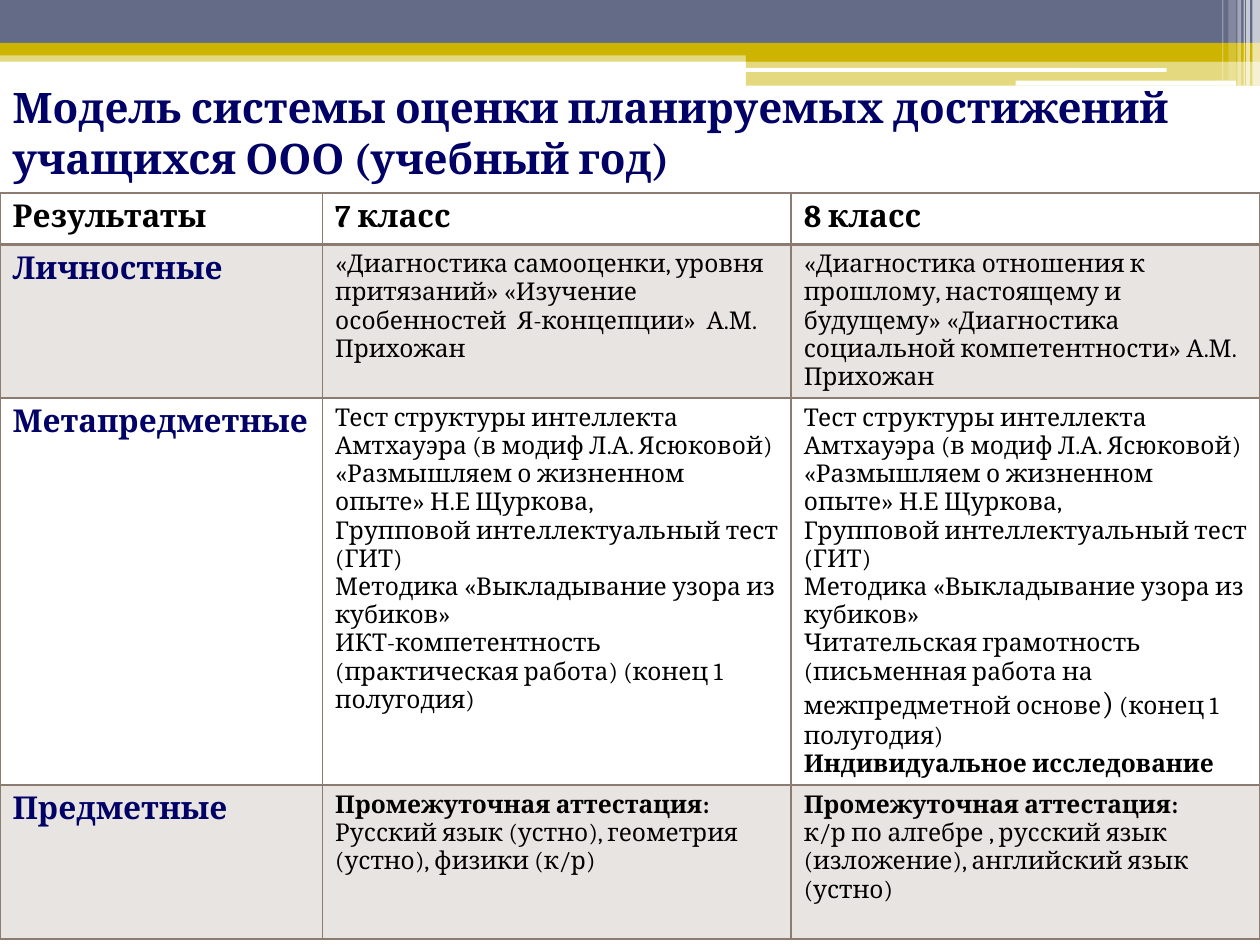
from pptx import Presentation
from pptx.dml.color import RGBColor
from pptx.enum import shapes, text
from pptx.oxml import parse_xml, ns
from pptx.util import Inches, Pt

FONT = "Cambria"
NAVY, BLACK, BROWN = "000066", "000000", "8C7B70"
SLATE, GOLD, WHITE = "646B86", "CCB400", "FFFFFF"

TITLE = "Модель системы оценки планируемых достижений учащихся ООО (учебный год)"
BARS = [
    (0, 0.4, 10, 0.09, GOLD, 50),
    (0, 0, 10, 0.34, SLATE, 100),
    (0, 0.34, 10, 0.1, GOLD, 100),
    (5.92, 0.39, 4.08, 0.1, GOLD, 100),
    (5.92, 0.48, 4.08, 0.2, GOLD, 50),
]
PILLS = [(5.91, 0.54, 3.35, 0.03, WHITE, 100), (8.06, 0.64, 1.75, 0.04, WHITE, 100)]
STRIPES = [
    (9.94, 0.06, 0.68, 65),
    (9.89, 0.03, 0.68, 65),
    (9.87, 0.01, 0.68, 60),
    (9.82, 0.03, 0.68, 40),
    (9.75, 0.06, 0.64, 20),
    (9.7, 0.01, 0.64, 30),
]

EXAM = "Промежуточная аттестация:"
STUDY = "Индивидуальное исследование"
STRONG = {EXAM, STUDY}
TESTS = [
    "Тест структуры интеллекта Амтхауэра (в модиф Л.А. Ясюковой)",
    "«Размышляем о жизненном опыте» Н.Е Щуркова,",
    "Групповой интеллектуальный тест",
    "(ГИТ)",
    "Методика «Выкладывание узора из кубиков»",
]
READING = (
    ("Читательская грамотность (письменная работа на межпредметной основе", 14),
    (")", 18),
    (" (конец 1 полугодия)", 14),
)
ROWS = [
    (["Результаты"], ["7 класс"], ["8 класс"]),
    (
        ["Личностные"],
        ["«Диагностика самооценки, уровня притязаний» «Изучение особенностей  Я-концепции»  А.М. Прихожан"],
        ["«Диагностика отношения к прошлому, настоящему и будущему» «Диагностика социальной компетентности» А.М. Прихожан"],
    ),
    (
        ["Метапредметные"],
        TESTS + ["ИКТ-компетентность (практическая работа) (конец 1 полугодия)"],
        TESTS + [READING, STUDY],
    ),
    (
        ["Предметные"],
        [EXAM, "Русский язык (устно), геометрия (устно), физики (к/р)"],
        [EXAM, "к/р по алгебре , русский язык (изложение), английский язык (устно)"],
    ),
]
WIDTHS = [2.56, 3.72, 3.72]
HEIGHTS = [0.41, 1.22, 3.07, 1.22]


def paint(fill, props, color, alpha=100):
    fill.solid()
    fill.fore_color.rgb = RGBColor.from_string(color)
    if alpha < 100:
        tint = props.find(ns.qn("a:solidFill"))[0]
        tint.append(parse_xml(f'<a:alpha {ns.nsdecls("a")} val="{alpha * 1000}"/>'))


def style(font, size, color, bold):
    font.name, font.size, font.bold = FONT, Pt(size), bold
    font.color.rgb = RGBColor.from_string(color)


def add_bar(slide, kind, left, top, width, height, color, alpha):
    bar = slide.shapes.add_shape(kind, *map(Inches, (left, top, width, height)))
    bar.shadow.inherit = False
    bar.line.fill.background()
    paint(bar.fill, bar.element.spPr, color, alpha)


def add_edges(props, row):
    widths = {"L": 1, "R": 1, "T": 2 if row == 1 else 1, "B": 2 if row == 0 else 1}
    for side, width in widths.items():
        props.append(parse_xml(
            f'<a:ln{side} {ns.nsdecls("a")} w="{Pt(width)}"><a:solidFill>'
            f'<a:srgbClr val="{BROWN}"/></a:solidFill></a:ln{side}>'))


def fill_cell(cell, lines, row, col):
    head = row == 0 or col == 0
    color = NAVY if row and col == 0 else BLACK
    for i, line in enumerate(lines):
        frame = cell.text_frame
        para = frame.paragraphs[0] if i == 0 else frame.add_paragraph()
        style(para.font, 18 if head else 14, color, head or line in STRONG)
        if isinstance(line, str):
            para.add_run().text = line
            continue
        for words, size in line:
            run = para.add_run()
            run.text = words
            style(run.font, size, color, False)
    props = cell._tc.get_or_add_tcPr()
    add_edges(props, row)
    if row % 2:
        paint(cell.fill, props, BROWN, 20)
    else:
        cell.fill.background()


def add_grid(slide):
    grid = slide.shapes.add_table(
        len(ROWS), len(WIDTHS), 0, Inches(1.53),
        Inches(sum(WIDTHS)), Inches(sum(HEIGHTS))).table
    grid.first_row = grid.horz_banding = False
    for column, width in zip(grid.columns, WIDTHS):
        column.width = Inches(width)
    for r, (cells, height) in enumerate(zip(ROWS, HEIGHTS)):
        grid.rows[r].height = Inches(height)
        for c, lines in enumerate(cells):
            fill_cell(grid.cell(r, c), lines, r, c)


def add_title(slide):
    title = slide.shapes.title
    title.left, title.top, title.width, title.height = map(Inches, (0, 0.6, 10, 0.91))
    frame = title.text_frame
    frame.text = TITLE
    frame.word_wrap = True
    frame.auto_size = text.MSO_AUTO_SIZE.NONE
    frame.vertical_anchor = text.MSO_ANCHOR.TOP
    para = frame.paragraphs[0]
    para.alignment = text.PP_ALIGN.LEFT
    style(para.font, 24, NAVY, True)


def main():
    deck = Presentation()
    deck.slide_width, deck.slide_height = Inches(10), Inches(7.5)
    slide = deck.slides.add_slide(deck.slide_layouts[5])
    kinds = shapes.MSO_SHAPE
    for bar in BARS:
        add_bar(slide, kinds.RECTANGLE, *bar)
    for pill in PILLS:
        add_bar(slide, kinds.ROUNDED_RECTANGLE, *pill)
    for left, width, height, alpha in STRIPES:
        add_bar(slide, kinds.RECTANGLE, left, 0, width, height, WHITE, alpha)
    add_grid(slide)
    add_title(slide)
    deck.save("out.pptx")


if __name__ == "__main__":
    main()
